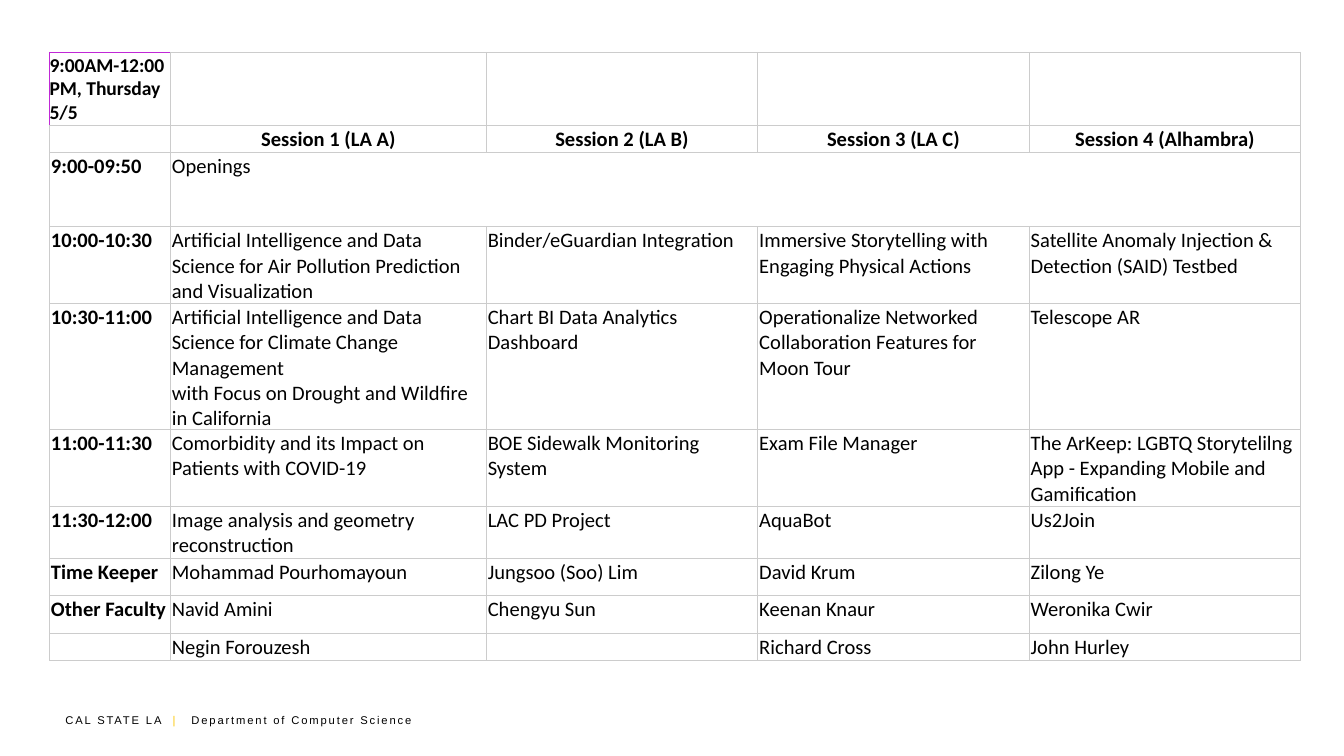
import lxml.etree
import pptx
import pptx.dml.color
import pptx.enum.text
import pptx.oxml.ns
import pptx.util

Pt = pptx.util.Pt
RGBColor = pptx.dml.color.RGBColor
Align = pptx.enum.text.PP_ALIGN
Anchor = pptx.enum.text.MSO_ANCHOR
qn = pptx.oxml.ns.qn

BLACK = RGBColor(0x00, 0x00, 0x00)
GRID = RGBColor(0xCC, 0xCC, 0xCC)
PURPLE = RGBColor(0xC0, 0x28, 0xD6)
GOLD = RGBColor(0xFC, 0xC9, 0x0A)

COL_WIDTHS = [64.8, 169.2, 145.44, 145.44, 145.44]
ROW_HEIGHTS = [35.3, 10.8, 39.6, 39.6, 49, 39.6, 20.2, 20.2, 20.2, 10.8]
TITLE_ROW, SESSION_ROW, OPENING_ROW = 0, 1, 2
LAST_ROW = len(ROW_HEIGHTS) - 1

SCHEDULE = [
    ["9:00AM-12:00PM, Thursday 5/5", "", "", "", ""],
    ["", "Session 1 (LA A)", "Session 2 (LA B)", "Session 3 (LA C)",
     "Session 4 (Alhambra)"],
    ["9:00-09:50", "Openings", "", "", ""],
    ["10:00-10:30",
     "Artificial Intelligence and Data Science for Air Pollution Prediction "
     "and Visualization",
     "Binder/eGuardian Integration",
     "Immersive Storytelling with Engaging Physical Actions",
     "Satellite Anomaly Injection & Detection (SAID) Testbed"],
    ["10:30-11:00",
     "Artificial Intelligence and Data Science for Climate Change Management\n"
     "with Focus on Drought and Wildfire in California",
     "Chart BI Data Analytics Dashboard",
     "Operationalize Networked Collaboration Features for Moon Tour",
     "Telescope AR"],
    ["11:00-11:30",
     "Comorbidity and its Impact on Patients with COVID-19",
     "BOE Sidewalk Monitoring System",
     "Exam File Manager",
     "The ArKeep: LGBTQ Storytelilng App - Expanding Mobile and Gamification"],
    ["11:30-12:00", "Image analysis and geometry reconstruction",
     "LAC PD Project", "AquaBot", "Us2Join"],
    ["Time Keeper", "Mohammad Pourhomayoun", "Jungsoo (Soo) Lim",
     "David Krum", "Zilong Ye"],
    ["Other Faculty", "Navid Amini", "Chengyu Sun", "Keenan Knaur",
     "Weronika Cwir"],
    ["", "Negin Forouzesh", "", "Richard Cross", "John Hurley"],
]


def add_run(p, text, font, size, color, bold=False):
    r = p.add_run()
    r.text = text
    r.font.name = font
    r.font.size = Pt(size)
    r.font.bold = bold
    r.font.color.rgb = color
    return r


def set_borders(cell, left_top):
    """Rule all four sides; left_top colours the left and top ones."""
    tc_pr = cell._tc.get_or_add_tcPr()
    sides = {"lnL": left_top, "lnR": GRID, "lnT": left_top, "lnB": GRID}
    for side, color in sides.items():
        ln = lxml.etree.SubElement(tc_pr, qn("a:" + side), w=str(Pt(0.5)))
        fill = lxml.etree.SubElement(ln, qn("a:solidFill"))
        lxml.etree.SubElement(fill, qn("a:srgbClr"), val=str(color))


def fill_cell(cell, text, row, col):
    size = 10.5 if row == TITLE_ROW else 11
    side = 0 if row == TITLE_ROW else 0.72
    cell.margin_left = cell.margin_right = Pt(side)
    cell.margin_top = cell.margin_bottom = Pt(0.72)
    if row == TITLE_ROW:
        cell.vertical_anchor = Anchor.MIDDLE
    elif row in (SESSION_ROW, LAST_ROW):
        cell.vertical_anchor = Anchor.BOTTOM
    else:
        cell.vertical_anchor = Anchor.TOP
    p = cell.text_frame.paragraphs[0]
    if row == SESSION_ROW:
        p.alignment = Align.CENTER
    if text:
        for i, line in enumerate(text.split("\n")):
            if i:
                p.add_line_break()
            add_run(p, line, "Calibri", size, BLACK,
                    col == 0 or row == SESSION_ROW)
    else:
        # Keeps an empty cell from stretching its row
        lxml.etree.SubElement(p._p, qn("a:endParaRPr"), sz=str(int(size * 100)))
    set_borders(cell, PURPLE if row == col == 0 else GRID)
    cell.fill.background()


def add_schedule(s, left, top):
    frame = s.shapes.add_table(
        len(SCHEDULE), len(COL_WIDTHS), Pt(left), Pt(top),
        Pt(sum(COL_WIDTHS)), Pt(sum(ROW_HEIGHTS)))
    table = frame.table
    table.first_row = table.horz_banding = False
    for column, width in zip(table.columns, COL_WIDTHS):
        column.width = Pt(width)
    for table_row, height in zip(table.rows, ROW_HEIGHTS):
        table_row.height = Pt(height)
    for row, texts in enumerate(SCHEDULE):
        for col, text in enumerate(texts):
            fill_cell(table.cell(row, col), text, row, col)
    table.cell(OPENING_ROW, 1).merge(table.cell(OPENING_ROW, 4))


def add_footer(s, left, top, width, height):
    sp = s.shapes.add_textbox(Pt(left), Pt(top), Pt(width), Pt(height))
    tf = sp.text_frame
    tf.word_wrap = True
    p = tf.paragraphs[0]
    tabs = lxml.etree.SubElement(p._p.get_or_add_pPr(), qn("a:tabLst"))
    lxml.etree.SubElement(tabs, qn("a:tab"), pos=str(Pt(67.5)), algn="l")
    parts = [("CAL STATE LA ", BLACK), (" |", GOLD),
             ("\tDepartment of Computer Science", BLACK)]
    for text, color in parts:
        r = add_run(p, text, "Arial", 6, color)
        r.font._element.set("spc", "100")


def main():
    prs = pptx.Presentation()
    prs.slide_width, prs.slide_height = Pt(720), Pt(405)
    s = prs.slides.add_slide(prs.slide_layouts[6])
    add_footer(s, 28, 378.7, 210, 14.4)
    add_schedule(s, 26.6, 28)
    prs.save("out.pptx")


if __name__ == "__main__":
    main()
